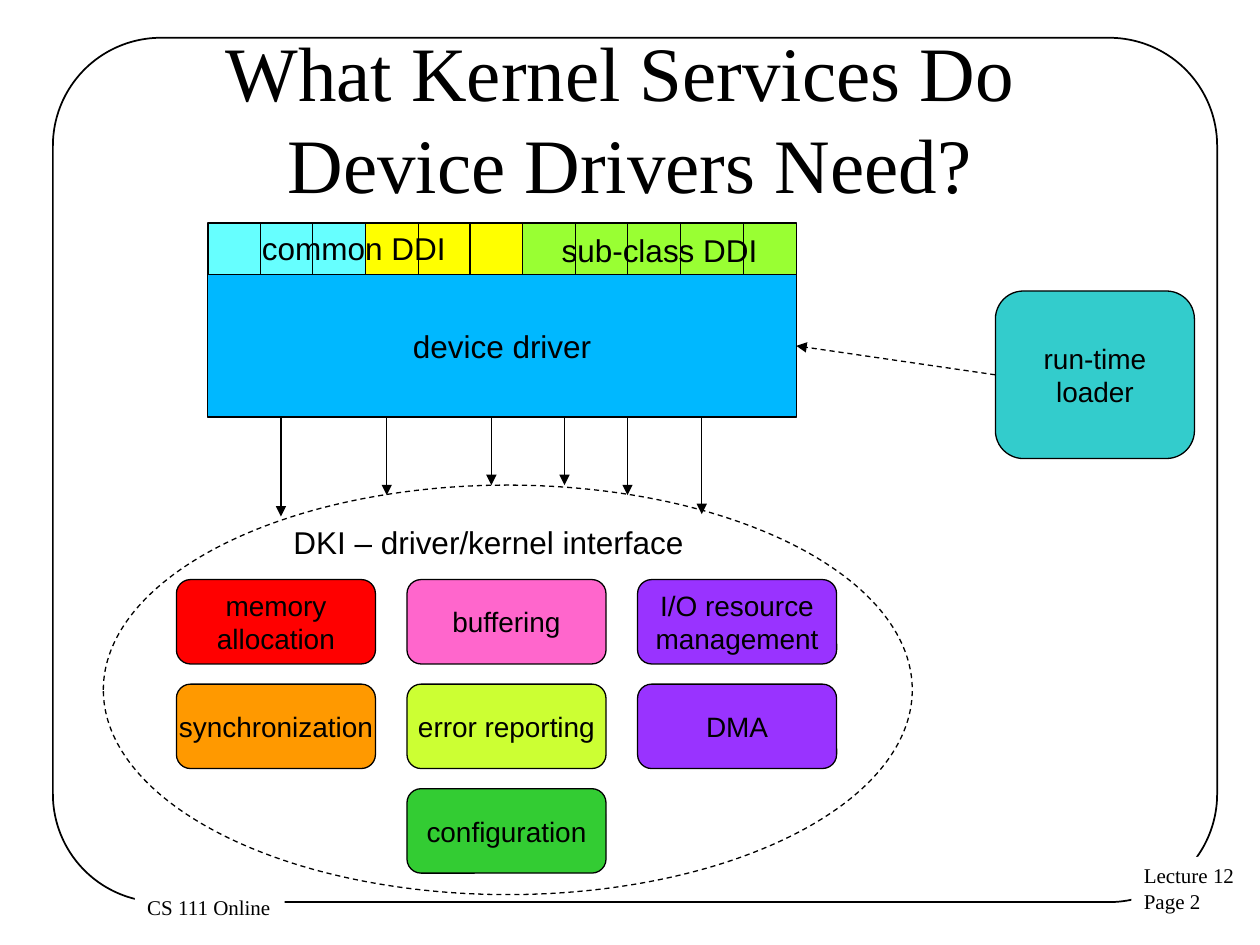
from dataclasses import dataclass
from typing import Optional

from pptx import Presentation
from pptx.dml.color import RGBColor
from pptx.enum.dml import MSO_LINE
from pptx.enum.shapes import MSO_CONNECTOR, MSO_SHAPE
from pptx.enum.text import MSO_ANCHOR, MSO_AUTO_SIZE, PP_ALIGN
from pptx.oxml.ns import qn
from pptx.util import Inches, Pt
from lxml import etree

RECT = MSO_SHAPE.RECTANGLE
ROUND = MSO_SHAPE.ROUNDED_RECTANGLE
OVAL = MSO_SHAPE.OVAL
LINE = MSO_CONNECTOR.STRAIGHT
DASH = MSO_LINE.DASH
CENTER, LEFT = PP_ALIGN.CENTER, PP_ALIGN.LEFT
MIDDLE, TOP = MSO_ANCHOR.MIDDLE, MSO_ANCHOR.TOP
FIXED = MSO_AUTO_SIZE.NONE

BLACK = RGBColor(0x00, 0x00, 0x00)
WHITE = RGBColor(0xFF, 0xFF, 0xFF)
CYAN = RGBColor(0x66, 0xFF, 0xFF)
YELLOW = RGBColor(0xFF, 0xFF, 0x00)
LIME = RGBColor(0x99, 0xFF, 0x33)
BLUE = RGBColor(0x00, 0xB8, 0xFF)
TEAL = RGBColor(0x33, 0xCC, 0xCC)
RED = RGBColor(0xFF, 0x00, 0x00)
PINK = RGBColor(0xFF, 0x66, 0xCC)
PURPLE = RGBColor(0x99, 0x33, 0xFF)
ORANGE = RGBColor(0xFF, 0x99, 0x00)
CITRON = RGBColor(0xCC, 0xFF, 0x33)
GREEN = RGBColor(0x33, 0xCC, 0x33)

SANS, SERIF = "Arial", "Times New Roman"


@dataclass
class Box:
    left: float
    top: float
    width: float
    height: float
    fill: Optional[RGBColor] = None
    text: str = ""
    size: int = 16
    kind: int = ROUND
    weight: float = 0.75
    round: float = 0.167


@dataclass
class Label:
    left: float
    top: float
    width: float
    height: float
    text: str
    size: int = 18
    font: str = SANS
    fill: Optional[RGBColor] = None
    wrap: bool = True


@dataclass
class Service:
    col: int
    row: int
    fill: RGBColor
    text: str


def write(frame, text: str, size: int, font: str, align, anchor) -> None:
    frame.text = text
    frame.auto_size = FIXED
    frame.vertical_anchor = anchor
    for para in frame.paragraphs:
        para.alignment = align
        for run in para.runs:
            run.font.size = Pt(size)
            run.font.name = font
            run.font.color.rgb = BLACK


def draw_box(slide, box: Box):
    shape = slide.shapes.add_shape(
        box.kind, Inches(box.left), Inches(box.top), Inches(box.width), Inches(box.height))
    shape.shadow.inherit = False
    if box.kind == ROUND:
        shape.adjustments[0] = box.round
    if box.fill is None:
        shape.fill.background()
    else:
        shape.fill.solid()
        shape.fill.fore_color.rgb = box.fill
    shape.line.color.rgb = BLACK
    shape.line.width = Pt(box.weight)
    if box.text:
        write(shape.text_frame, box.text, box.size, SANS, CENTER, MIDDLE)
        shape.text_frame.word_wrap = False
    return shape


def draw_label(slide, label: Label) -> None:
    shape = slide.shapes.add_textbox(
        Inches(label.left), Inches(label.top), Inches(label.width), Inches(label.height))
    if label.fill is not None:
        shape.fill.solid()
        shape.fill.fore_color.rgb = label.fill
    write(shape.text_frame, label.text, label.size, label.font, LEFT, TOP)
    shape.text_frame.word_wrap = label.wrap


def draw_line(slide, x1: float, y1: float, x2: float, y2: float, arrow: bool = False):
    line = slide.shapes.add_connector(LINE, Inches(x1), Inches(y1), Inches(x2), Inches(y2))
    line.line.color.rgb = BLACK
    line.line.width = Pt(0.75)
    if arrow:
        etree.SubElement(line.line._get_or_add_ln(), qn("a:tailEnd"), type="triangle")
    etree.SubElement(line._element.spPr, qn("a:effectLst"))
    return line


def main() -> None:
    prs = Presentation()
    prs.slide_width, prs.slide_height = Inches(10), Inches(7.5)
    slide = prs.slides.add_slide(prs.slide_layouts[5])

    # Frame and footers
    title = slide.shapes.title
    draw_box(slide, Box(0.42, 0.3, 9.24, 6.86, weight=1, round=0.125))
    for foot in (
        Label(8.98, 6.8, 0.93, 0.51, "Lecture 12\nPage 2", 12, SERIF, WHITE, False),
        Label(1.07, 7.05, 1.19, 0.3, "CS 111 Online", 12, SERIF, WHITE, False),
    ):
        draw_label(slide, foot)

    # Title
    title.left, title.top = Inches(0.5), Inches(0.3)
    title.width, title.height = Inches(9), Inches(1.25)
    write(title.text_frame, "What Kernel Services Do \vDevice Drivers Need?",
          44, SERIF, CENTER, MIDDLE)

    # Driver with its interface strip
    strip, deck, base = 1.77, 2.18, 3.31
    left, width = 1.65, 4.67
    draw_box(slide, Box(2.9, strip, 1.25, 0.42, YELLOW, kind=RECT))
    draw_box(slide, Box(left, strip, 1.25, 0.42, CYAN, kind=RECT))
    draw_box(slide, Box(4.15, strip, 2.17, 0.42, LIME, "sub-class DDI", 18, RECT))
    driver = draw_box(
        slide, Box(left, deck, width, base - deck, BLUE, "device driver", 18, RECT))
    for x in (2.07, 2.48, 2.9, 3.32, 3.73, 4.57, 4.98, 5.4, 5.9):
        draw_line(slide, x, strip, x, deck)
    draw_label(slide, Label(1.98, strip, 1.75, 0.4, "common DDI"))

    # Run-time loader
    loader = draw_box(slide, Box(7.9, 2.31, 1.58, 1.33, TEAL, "run-time\nloader"))
    link = draw_line(slide, 7.9, 2.98, 6.32, 2.75, arrow=True)
    link.begin_connect(loader, 1)
    link.end_connect(driver, 3)
    link.line.dash_style = DASH

    # Kernel services in a grid
    for item in (
        Service(0, 0, RED, "memory\nallocation"),
        Service(1, 0, PINK, "buffering"),
        Service(2, 0, PURPLE, "I/O resource\nmanagement"),
        Service(0, 1, ORANGE, "synchronization"),
        Service(1, 1, CITRON, "error reporting"),
        Service(2, 1, PURPLE, "DMA"),
        Service(1, 2, GREEN, "configuration"),
    ):
        x, y = 1.4 + 1.83 * item.col, 4.6 + 0.83 * item.row
        draw_box(slide, Box(x, y, 1.58, 0.67, item.fill, item.text))

    # Driver/kernel interface
    kernel = draw_box(slide, Box(0.82, 3.85, 6.42, 3.25, kind=OVAL))
    kernel.line.dash_style = DASH
    draw_label(slide, Label(2.23, 4.1, 3.58, 0.4, "DKI – driver/kernel interface"))
    for x, tip in ((2.23, 4.1), (3.07, 3.93), (3.9, 3.85),
                   (4.48, 3.85), (4.98, 3.93), (5.57, 4.08)):
        draw_line(slide, x, base, x, tip, arrow=True)

    prs.save("out.pptx")


if __name__ == "__main__":
    main()
